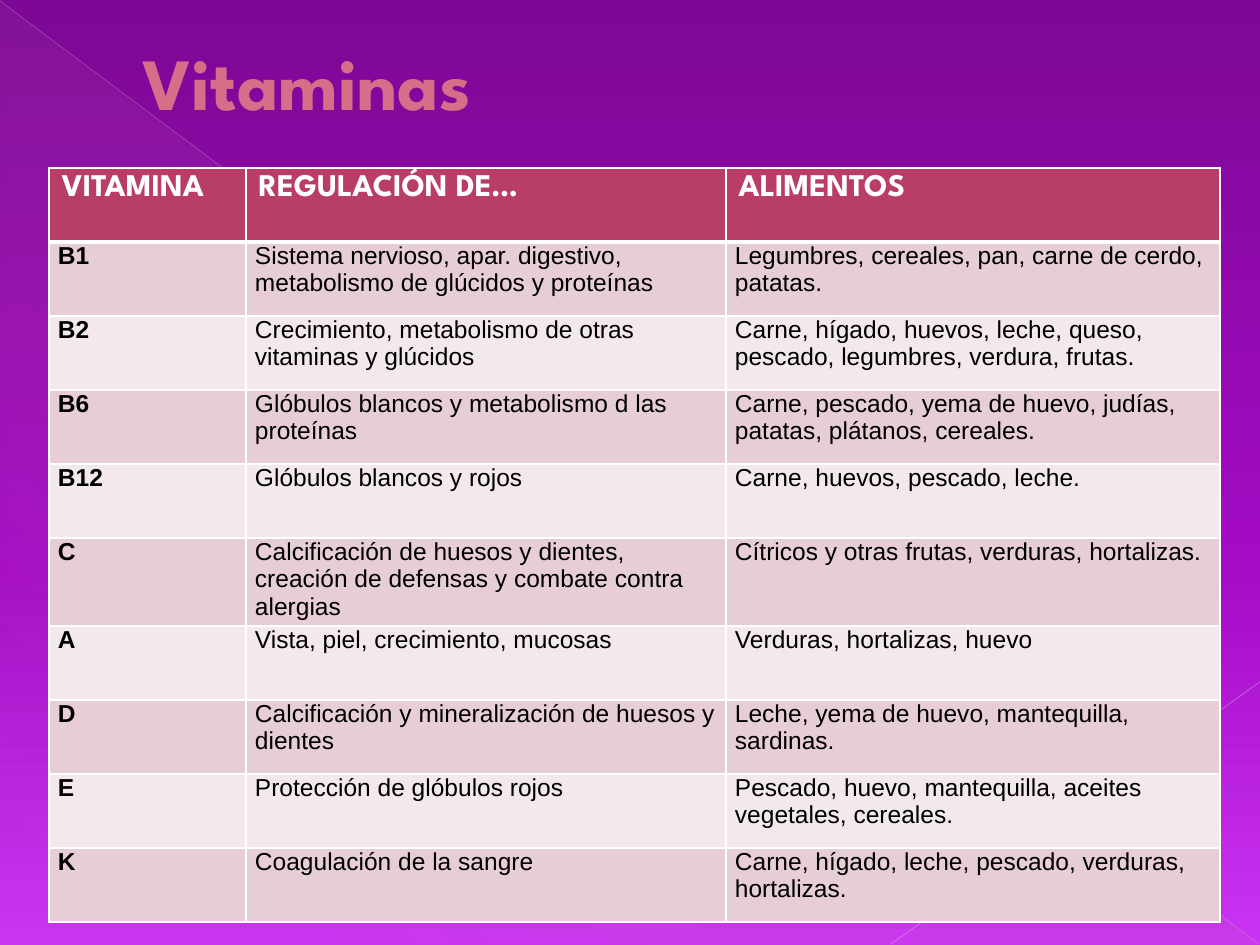
from lxml import etree
from pptx import Presentation
from pptx.dml.color import RGBColor
from pptx.enum.shapes import MSO_CONNECTOR, MSO_SHAPE
from pptx.enum.text import MSO_ANCHOR
from pptx.oxml.ns import qn
from pptx.util import Pt

TITLE = "Vitaminas"
HEADERS = ["VITAMINA", "REGULACIÓN DE…", "ALIMENTOS"]
VITAMINS = [
    ("B1", "Sistema nervioso, apar. digestivo, metabolismo de glúcidos y proteínas",
     "Legumbres, cereales, pan, carne de cerdo, patatas."),
    ("B2", "Crecimiento, metabolismo de otras vitaminas y glúcidos",
     "Carne, hígado, huevos, leche, queso, pescado, legumbres, verdura, frutas."),
    ("B6", "Glóbulos blancos y metabolismo d las proteínas",
     "Carne, pescado, yema de huevo, judías, patatas, plátanos, cereales."),
    ("B12", "Glóbulos blancos y rojos", "Carne, huevos, pescado, leche."),
    ("C", "Calcificación de huesos y dientes, creación de defensas y combate contra alergias",
     "Cítricos y otras frutas, verduras, hortalizas."),
    ("A", "Vista, piel, crecimiento, mucosas", "Verduras, hortalizas, huevo"),
    ("D", "Calcificación y mineralización de huesos y dientes",
     "Leche, yema de huevo, mantequilla, sardinas."),
    ("E", "Protección de glóbulos rojos",
     "Pescado, huevo, mantequilla, aceites vegetales, cereales."),
    ("K", "Coagulación de la sangre",
     "Carne, hígado, leche, pescado, verduras, hortalizas."),
]

WHITE = RGBColor(0xFF, 0xFF, 0xFF)
BLACK = RGBColor(0x00, 0x00, 0x00)
ROSE = RGBColor(0xD8, 0x6D, 0x89)
WINE = RGBColor(0x7F, 0x2A, 0x48)
HEADER_FILL = RGBColor(0xB8, 0x3D, 0x68)
BANDS = [RGBColor(0xE6, 0xCE, 0xD4), RGBColor(0xF3, 0xE8, 0xEB)]
MAUVE = RGBColor(0xD7, 0x87, 0xA3)
BACKGROUND_STOPS = [(0, RGBColor(0x7C, 0x08, 0x95), 100),
                    (60, RGBColor(0xA4, 0x0B, 0xC5), 100),
                    (100, RGBColor(0xCA, 0x33, 0xF3), 100)]
TRIANGLE_STOPS = [(0, MAUVE, 10), (70, MAUVE, 8), (100, MAUVE, 1)]
DIAGONALS = [
    ((0, 1, 1259, 944), RGBColor(0xCE, 0xAE, 0xD9), 0.39, 35),
    ((1260, 682, 891, 944), RGBColor(0xD3, 0xB7, 0xDD), 0.47, 45),
]
COLUMNS = [197, 480, 494]
ROW_HEIGHT = 74
HEADING_FONT = "League Spartan"
BODY_FONT = "Arial"
PX = 914400 // 126


def px(*values):
    return [v * PX for v in values]


def child(parent, tag, **attrs):
    return etree.SubElement(parent, qn(tag), {k: str(v) for k, v in attrs.items()})


def add_color(parent, color, opacity=100):
    clr = child(parent, "a:srgbClr", val=color)
    if opacity < 100:
        child(clr, "a:alpha", val=opacity * 1000)


def set_gradient(fill, element, stops, angle):
    fill.gradient()
    grad = next(element.iter(qn("a:gradFill")))
    for old in list(grad):
        grad.remove(old)
    gs_list = child(grad, "a:gsLst")
    for position, color, opacity in stops:
        add_color(child(gs_list, "a:gs", pos=position * 1000), color, opacity)
    child(grad, "a:lin", ang=angle * 60000, scaled=0)


def add_diagonal(slide, ends, color, width, opacity):
    line = slide.shapes.add_connector(MSO_CONNECTOR.STRAIGHT, *px(*ends))
    line.line.color.rgb = color
    line.line.width = Pt(width)
    child(next(line.element.iter(qn("a:srgbClr"))), "a:alpha", val=opacity * 1000)
    child(line.element.spPr, "a:effectLst")


def format_run(r, font, size, color, bold):
    r.font.name = font
    r.font.size = Pt(size)
    r.font.color.rgb = color
    r.font.bold = bold


def add_title(slide):
    tf = slide.shapes.add_textbox(*px(63, -15, 1134, 193)).text_frame
    tf.word_wrap = True
    tf.vertical_anchor = MSO_ANCHOR.MIDDLE
    tf.text = TITLE
    p = tf.paragraphs[0]
    p._p.get_or_add_pPr().set("marL", str(67 * PX))
    r = p.runs[0]
    format_run(r, HEADING_FONT, 42, ROSE, True)
    outline = etree.Element(qn("a:ln"), w=str(Pt(0.5)))
    add_color(child(outline, "a:solidFill"), WINE)
    r._r.get_or_add_rPr().insert(0, outline)


def set_borders(cell, top, bottom):
    tcPr = cell._tc.get_or_add_tcPr()
    sides = [("a:lnL", 1), ("a:lnR", 1), ("a:lnT", top), ("a:lnB", bottom)]
    for i, (tag, width) in enumerate(sides):
        border = etree.Element(qn(tag), w=str(Pt(width)))
        add_color(child(border, "a:solidFill"), WHITE)
        tcPr.insert(i, border)


def add_vitamin_table(slide):
    rows = [HEADERS, *VITAMINS]
    frame = slide.shapes.add_table(
        len(rows), len(COLUMNS), *px(49, 168, sum(COLUMNS), ROW_HEIGHT * len(rows)))
    table = frame.table
    for column, width in zip(table.columns, COLUMNS):
        column.width = width * PX
    for i, texts in enumerate(rows):
        table.rows[i].height = ROW_HEIGHT * PX
        for j, text in enumerate(texts):
            cell = table.cell(i, j)
            cell.text = text
            r = cell.text_frame.paragraphs[0].runs[0]
            cell.fill.solid()
            if i == 0:
                cell.fill.fore_color.rgb = HEADER_FILL
                format_run(r, HEADING_FONT, 18, WHITE, True)
            else:
                cell.fill.fore_color.rgb = BANDS[(i - 1) % 2]
                cell.margin_left = cell.margin_right = 9 * PX
                cell.margin_top = cell.margin_bottom = 0
                format_run(r, BODY_FONT, 14, BLACK, j == 0)
            set_borders(cell, 3 if i == 1 else 1, 3 if i == 0 else 1)


def main():
    prs = Presentation()
    prs.slide_width, prs.slide_height = px(1260, 945)
    slide = prs.slides.add_slide(prs.slide_layouts[6])
    set_gradient(slide.background.fill, slide.element, BACKGROUND_STOPS, 90)
    triangle = slide.shapes.add_shape(MSO_SHAPE.RIGHT_TRIANGLE, *px(1, 2, 1258, 942))
    triangle.shadow.inherit = False
    triangle.line.fill.background()
    set_gradient(triangle.fill, triangle.element, TRIANGLE_STOPS, 133)
    for diagonal in DIAGONALS:
        add_diagonal(slide, *diagonal)
    add_title(slide)
    add_vitamin_table(slide)
    prs.save("out.pptx")


if __name__ == "__main__":
    main()
